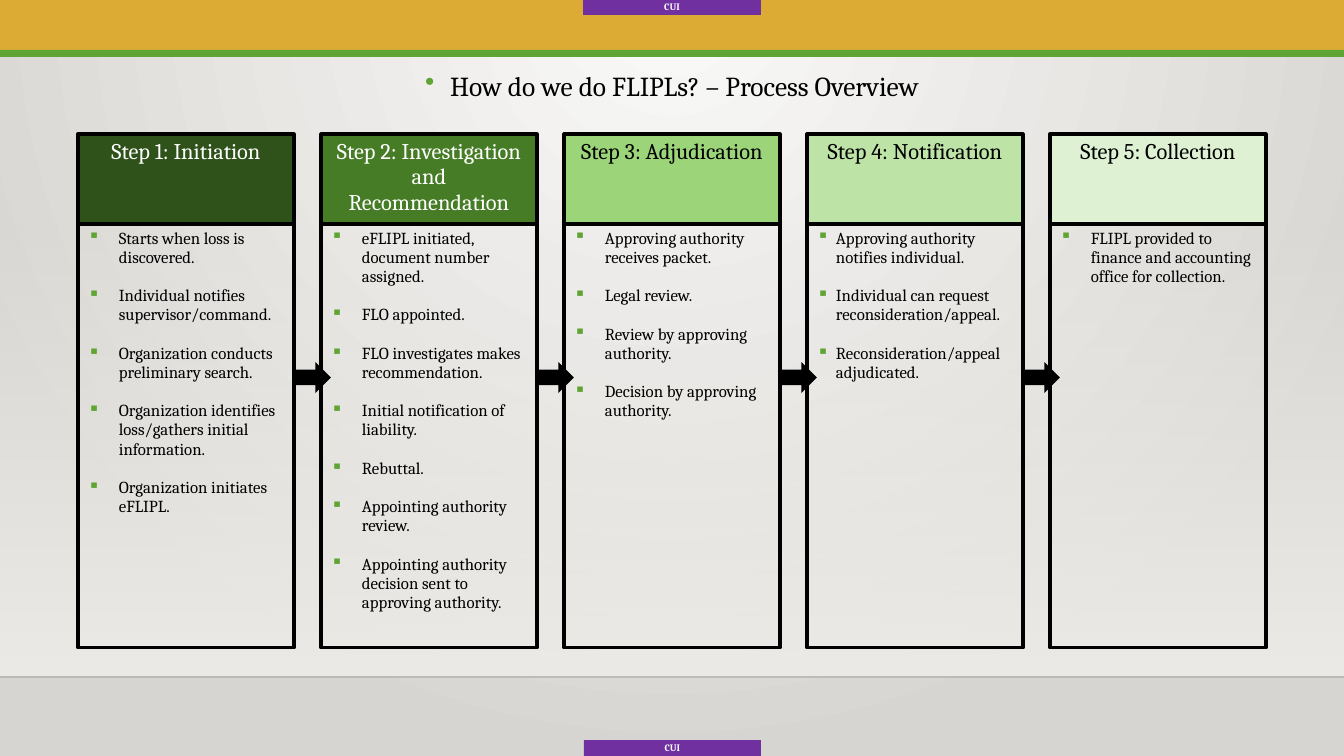
import pptx
import pptx.dml.color
import pptx.enum.shapes
import pptx.enum.text
import pptx.oxml
import pptx.oxml.ns
import pptx.util

PX = 12192000 / 1344
SHAPES = pptx.enum.shapes.MSO_SHAPE
ALIGN = pptx.enum.text.PP_ALIGN
ANCHOR = pptx.enum.text.MSO_ANCHOR
THEME = {
    "font": "Cambria",
    "gold": "DCAB34", "green": "5FA534", "purple": "7030A0",
    "black": "000000", "white": "FFFFFF", "rule": "000001",
    "glow": "FAFAF9", "edge": "D7D5D2", "haze": "EDEBE7",
    "marking": 7, "title": 19.6, "header": 16, "body": 12,
    "border": 2.25, "tight": 0.95, "step gap": 13.7,
}
STEPS = [
    ("Step 1: Initiation", "2F521A", "white", 31, [
        "Starts when loss is discovered.",
        "Individual notifies supervisor/command.",
        "Organization conducts preliminary search.",
        "Organization identifies loss/gathers initial information.",
        "Organization initiates eFLIPL."]),
    ("Step 2: Investigation and Recommendation", "477C27", "white", 31, [
        "eFLIPL initiated, document number assigned.",
        "FLO appointed.",
        "FLO investigates makes recommendation.",
        "Initial notification of liability.",
        "Rebuttal.",
        "Appointing authority review.",
        "Appointing authority decision sent to approving authority."]),
    ("Step 3: Adjudication", "9CD579", "black", 31, [
        "Approving authority receives packet.",
        "Legal review.",
        "Review by approving authority.",
        "Decision by approving authority."]),
    ("Step 4: Notification", "BDE3A6", "black", 19, [
        "Approving authority notifies individual.",
        "Individual can request reconsideration/appeal.",
        "Reconsideration/appeal adjudicated."]),
    ("Step 5: Collection", "DEF1D2", "black", 31, [
        "FLIPL provided to finance and accounting office for collection."]),
]
COLUMN_LEFT, COLUMN_PITCH, COLUMN_WIDTH = 78, 243, 216
HEADER_TOP, HEADER_HEIGHT, BODY_HEIGHT = 134, 90, 424

rgb = pptx.dml.color.RGBColor.from_string
qn = pptx.oxml.ns.qn
NS = pptx.oxml.ns.nsdecls("a")

deck = pptx.Presentation()
deck.slide_width, deck.slide_height = round(1344 * PX), round(756 * PX)
slide = deck.slides.add_slide(deck.slide_layouts[6])


def add_box(box, fill=None, border=False, kind=SHAPES.RECTANGLE):
    """Add a preset shape; box is left, top, width, height in px."""
    shape = slide.shapes.add_shape(kind, *(round(v * PX) for v in box))
    shape.shadow.inherit = False
    if fill:
        shape.fill.solid()
        shape.fill.fore_color.rgb = rgb(fill)
    else:
        shape.fill.background()
    if border:
        shape.line.color.rgb = rgb(THEME["black"])
        shape.line.width = pptx.util.Pt(THEME["border"])
    else:
        shape.line.fill.background()
    return shape


def write(shape, lines, size, color, align, anchor=ANCHOR.TOP, inset=None,
          bullet=None, indent=0, spacing=THEME["tight"]):
    """Fill a shape with paragraphs, bulleted if a bullet is given."""
    frame = shape.text_frame
    settings = {"word_wrap": True, "vertical_anchor": anchor}
    if inset is not None:
        settings |= {f"margin_{side}": inset for side in ("left", "top", "right", "bottom")}
    for name, value in settings.items():
        setattr(frame, name, value)
    for number, line in enumerate(lines):
        paragraph = frame.add_paragraph() if number else frame.paragraphs[0]
        if bullet:
            properties = paragraph._p.get_or_add_pPr()
            properties.set("marL", str(round(indent * PX)))
            properties.set("indent", str(round(-indent * PX)))
            for xml in (f'<a:buClr {NS}><a:srgbClr val="{THEME["green"]}"/></a:buClr>',
                        f'<a:buChar {NS} char="{bullet}"/>'):
                properties.append(pptx.oxml.parse_xml(xml))
        paragraph.alignment = align
        paragraph.line_spacing = spacing
        if number:
            paragraph.space_before = pptx.util.Pt(THEME["step gap"])
        run = paragraph.add_run()
        run.text = line
        run.font.name = THEME["font"]
        run.font.size = pptx.util.Pt(size)
        run.font.color.rgb = rgb(THEME[color])
        run.font.bold = size == THEME["marking"]


# Backdrop
slide.background.fill.gradient()
backdrop = slide.element.find(".//" + qn("a:gradFill"))
haze = add_box((0, 222, 1344, 454))
haze.fill.gradient()
gradients = [
    (backdrop, THEME["glow"], THEME["edge"], 100000,
     '<a:path path="circle"><a:fillToRect l="43000" t="0" r="43000" b="100000"/></a:path>'),
    (haze.element.find(".//" + qn("a:gradFill")), THEME["haze"], THEME["haze"], 0,
     '<a:lin ang="5400000" scaled="0"/>'),
]
for gradient, start, end, start_alpha, direction in gradients:
    gradient.getparent().replace(gradient, pptx.oxml.parse_xml(
        f'<a:gradFill {NS} rotWithShape="1"><a:gsLst>'
        f'<a:gs pos="0"><a:srgbClr val="{start}"><a:alpha val="{start_alpha}"/></a:srgbClr></a:gs>'
        f'<a:gs pos="100000"><a:srgbClr val="{end}"/></a:gs>'
        f'</a:gsLst>{direction}</a:gradFill>'))

floor_line = slide.shapes.add_connector(
    pptx.enum.shapes.MSO_CONNECTOR.STRAIGHT, 0, round(677 * PX), deck.slide_width, round(677 * PX))
floor_line.line.color.rgb = rgb(THEME["rule"])
floor_line.line.width = pptx.util.Pt(1)
floor_line.element.find(".//" + qn("a:srgbClr")).append(
    pptx.oxml.parse_xml(f'<a:alpha {NS} val="20000"/>'))
floor_line.element.spPr.append(pptx.oxml.parse_xml(f"<a:effectLst {NS}/>"))

# Banner and markings
add_box((0, 0, 1344, 50), THEME["gold"])
add_box((0, 50, 1344, 7), THEME["green"])
for marking_box in ((583, 0, 178, 15), (584, 740, 177, 16)):
    write(add_box(marking_box, THEME["purple"]), ["CUI"], THEME["marking"], "white",
          ALIGN.CENTER, ANCHOR.MIDDLE, inset=0)

title = slide.shapes.add_textbox(*(round(v * PX) for v in (165, 62, 1014, 47)))
write(title, ["How do we do FLIPLs? – Process Overview"], THEME["title"], "black",
      ALIGN.CENTER, ANCHOR.MIDDLE, bullet="•", indent=25, spacing=1.0)

# Process columns
for column, (heading, shade, ink, indent, tasks) in enumerate(STEPS):
    left = COLUMN_LEFT + column * COLUMN_PITCH
    header = add_box((left, HEADER_TOP, COLUMN_WIDTH, HEADER_HEIGHT), shade, border=True)
    write(header, [heading], THEME["header"], ink, ALIGN.CENTER)
    body = add_box((left, HEADER_TOP + HEADER_HEIGHT, COLUMN_WIDTH, BODY_HEIGHT), border=True)
    write(body, tasks, THEME["body"], "black", ALIGN.LEFT, bullet="▪", indent=indent)

for column in range(len(STEPS) - 1):
    arrow_left = COLUMN_LEFT + column * COLUMN_PITCH + COLUMN_WIDTH
    add_box((arrow_left, 362, 37, 31), THEME["black"], kind=SHAPES.RIGHT_ARROW)

deck.save("out.pptx")
